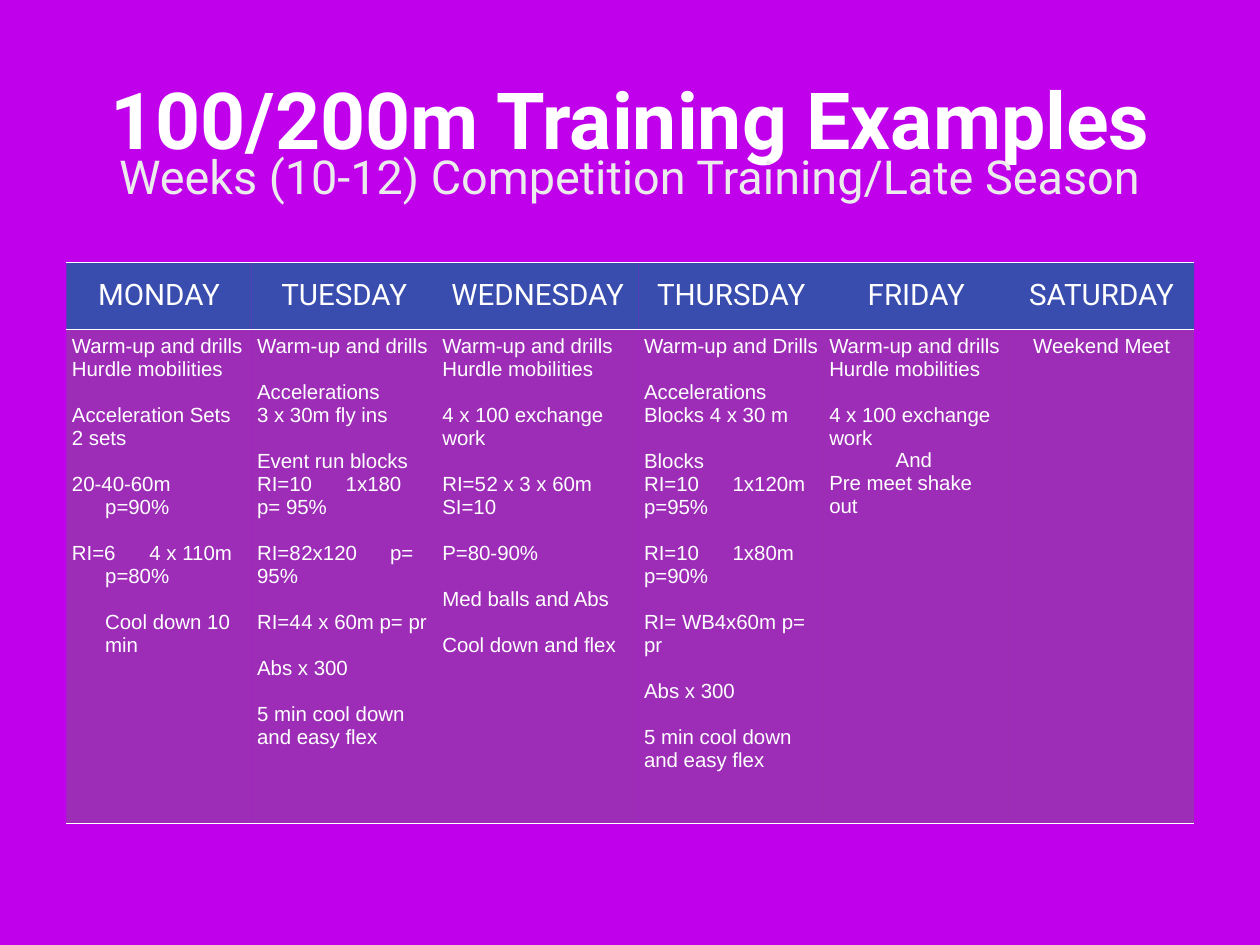
from lxml import etree
from pptx import Presentation
from pptx.dml.color import RGBColor
from pptx.enum.text import MSO_ANCHOR, MSO_AUTO_SIZE, PP_ALIGN
from pptx.oxml.ns import qn
from pptx.util import Pt

LEFT, CENTER = PP_ALIGN.LEFT, PP_ALIGN.CENTER
TOP, MIDDLE, BOTTOM = MSO_ANCHOR.TOP, MSO_ANCHOR.MIDDLE, MSO_ANCHOR.BOTTOM
FIT_NONE, FIT_SHAPE = MSO_AUTO_SIZE.NONE, MSO_AUTO_SIZE.SHAPE_TO_FIT_TEXT

PURPLE = RGBColor(0xC0, 0x00, 0xEB)
BLUE = RGBColor(0x18, 0x61, 0xA1)
GREY = RGBColor(0x6D, 0x6D, 0x6D)
WHITE = RGBColor(0xFF, 0xFF, 0xFF)
PALE = RGBColor(0xEB, 0xEB, 0xEB)

HEADING_FONT, BODY_FONT = "Roboto", "Arial"
BODY_SIZE = 16.6
BLOCK_GAP = 19.07
STEP = 27

# Each day is a list of blocks; a line is its text, or text with left margin and first-line indent
WEEK = {
    "MONDAY": [
        ["Warm-up and drills", "Hurdle mobilities"],
        ["Acceleration Sets", "2 sets"],
        ["20-40-60m", ("p=90%", STEP, 0)],
        [("RI=6\t4 x 110m p=80%", STEP, -STEP)],
        [("Cool down 10 min", STEP, 0)],
    ],
    "TUESDAY": [
        ["Warm-up and drills"],
        ["Accelerations", "3 x 30m fly ins"],
        ["Event run blocks", "RI=10\t1x180\tp= 95%"],
        ["RI=8\t2x120\tp= 95%"],
        ["RI=4\t4 x 60m p= pr"],
        ["Abs x 300"],
        ["5 min cool down and easy flex"],
    ],
    "WEDNESDAY": [
        ["Warm-up and drills", "Hurdle mobilities"],
        ["4 x 100 exchange work"],
        ["RI=5\t2 x 3 x 60m", "SI=10"],
        ["P=80-90%"],
        ["Med balls and Abs"],
        ["Cool down and flex"],
    ],
    "THURSDAY": [
        ["Warm-up and Drills"],
        ["Accelerations", "Blocks 4 x 30 m"],
        ["Blocks", "RI=10\t1x120m p=95%"],
        ["RI=10\t1x80m p=90%"],
        ["RI= WB4x60m p= pr"],
        ["Abs x 300"],
        ["5 min cool down and easy flex"],
    ],
    "FRIDAY": [
        ["Warm-up and drills", "Hurdle mobilities"],
        ["4 x 100 exchange work", ("And", 2 * STEP, 0), "Pre meet shake out"],
    ],
    "SATURDAY": [["Weekend Meet"]],
}
TAB_STOPS = {"MONDAY": [45], "TUESDAY": [55, 111], "WEDNESDAY": [45], "THURSDAY": [54]}
COLUMN_WIDTHS = [150.5, 150.5, 164, 150.5, 150.5, 150.5]
ROW_HEIGHTS = [54.8, 401.2]


class Page:
    def __init__(self, slide):
        self.slide = slide
        slide.background.fill.solid()
        slide.background.fill.fore_color.rgb = PURPLE

    def style(self, paragraph, font, size, color, align=CENTER, bold=False):
        paragraph.alignment = align
        for run in paragraph.runs:
            run.font.name, run.font.size = font, Pt(size)
            run.font.bold, run.font.color.rgb = bold, color

    def text(self, shape, box, words, size, color, anchor, inset, fit, bold=False):
        shape.left, shape.top, shape.width, shape.height = (Pt(v) for v in box)
        frame = shape.text_frame
        frame.text = words
        frame.word_wrap, frame.auto_size = True, fit
        frame.vertical_anchor = anchor
        frame.margin_left = frame.margin_right = Pt(inset)
        frame.margin_top = frame.margin_bottom = Pt(inset)
        self.style(frame.paragraphs[0], HEADING_FONT, size, color, bold=bold)

    def title(self, box, words):
        self.text(self.slide.shapes.title, box, words, 64, WHITE, BOTTOM, 0, FIT_NONE, True)

    def subtitle(self, box, words):
        shape = self.slide.shapes.add_textbox(*(Pt(v) for v in box))
        self.text(shape, box, words, 38, PALE, MIDDLE, 4.5, FIT_SHAPE)

    def cell(self, cell, color, opacity, anchor):
        cell.fill.solid()
        cell.fill.fore_color.rgb = color
        cell.vertical_anchor = anchor
        cell.margin_left = cell.margin_right = Pt(4.5)
        cell.margin_top = cell.margin_bottom = Pt(4.5)
        properties = cell._tc.get_or_add_tcPr()
        tint = properties.find(".//" + qn("a:srgbClr"))
        etree.SubElement(tint, qn("a:alpha"), val=str(opacity * 1000))
        # White rules above and below, none at the sides
        for index, side in enumerate(("lnL", "lnR", "lnT", "lnB")):
            line = etree.Element(qn("a:" + side), w=str(Pt(1)))
            if side in ("lnT", "lnB"):
                fill = etree.SubElement(line, qn("a:solidFill"))
                etree.SubElement(fill, qn("a:srgbClr"), val=str(WHITE))
            else:
                etree.SubElement(line, qn("a:noFill"))
            properties.insert(index, line)

    def workout(self, frame, blocks, stops, align):
        lines = [(line, i > 0 and j == 0)
                 for i, block in enumerate(blocks) for j, line in enumerate(block)]
        for index, (line, starts_block) in enumerate(lines):
            words, margin, indent = line if isinstance(line, tuple) else (line, 0, 0)
            paragraph = frame.add_paragraph() if index else frame.paragraphs[0]
            paragraph.text = words
            if starts_block:
                paragraph.space_before = Pt(BLOCK_GAP)
            properties = paragraph._p.get_or_add_pPr()
            properties.set("marL", str(Pt(margin)))
            properties.set("indent", str(Pt(indent)))
            if "\t" in words:
                tabs = etree.SubElement(properties, qn("a:tabLst"))
                for stop in stops:
                    etree.SubElement(tabs, qn("a:tab"), pos=str(Pt(stop)), algn="l")
            self.style(paragraph, BODY_FONT, BODY_SIZE, WHITE, align)

    def timetable(self, left, top):
        box = (left, top, sum(COLUMN_WIDTHS), sum(ROW_HEIGHTS))
        table = self.slide.shapes.add_table(2, len(WEEK), *(Pt(v) for v in box)).table
        table.horz_banding = False
        for row, height in zip(table.rows, ROW_HEIGHTS):
            row.height = Pt(height)
        for column, (day, blocks) in enumerate(WEEK.items()):
            table.columns[column].width = Pt(COLUMN_WIDTHS[column])
            heading, plan = table.cell(0, column), table.cell(1, column)
            self.cell(heading, BLUE, 80, MIDDLE)
            heading.text_frame.text = day
            self.style(heading.text_frame.paragraphs[0], HEADING_FONT, 24, WHITE)
            self.cell(plan, GREY, 41, TOP)
            align = CENTER if day == "SATURDAY" else LEFT
            self.workout(plan.text_frame, blocks, TAB_STOPS.get(day, []), align)


def main():
    deck = Presentation()
    deck.slide_width, deck.slide_height = Pt(1024), Pt(768)
    page = Page(deck.slides.add_slide(deck.slide_layouts[5]))

    # Heading, weekly plan and season line
    page.title((60, 4.5, 904, 130), "100/200m Training Examples")
    page.timetable(54, 213)
    page.subtitle((54, 116.5, 916, 52.5), "Weeks (10-12) Competition Training/Late Season")

    deck.save("out.pptx")


if __name__ == "__main__":
    main()
